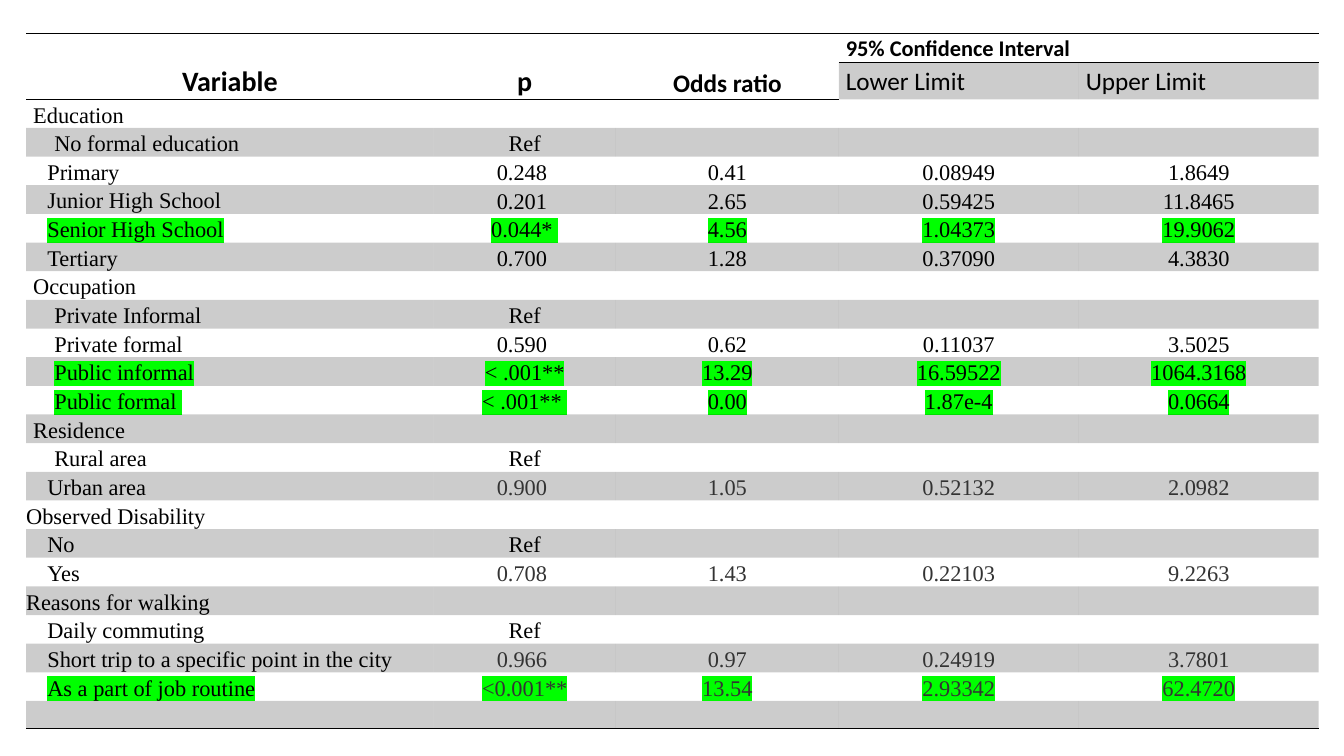
from lxml.etree import SubElement
from pptx import Presentation
from pptx.dml.color import RGBColor
from pptx.enum.text import MSO_ANCHOR, PP_ALIGN
from pptx.oxml.ns import qn
from pptx.util import Inches, Pt

BLACK, GREY, GREEN = "000000", "333333", "00FF00"
NO_STYLE = "{2D5ABB26-0587-4C30-8999-92F81FD0307C}"
INSET, INDENT = 0.07, 0.21


def add_solid(parent, color, alpha=100):
    solid = SubElement(parent, qn("a:solidFill"))
    tone = SubElement(solid, qn("a:srgbClr"), val=color)
    if alpha < 100:
        SubElement(tone, qn("a:alpha"), val=str(alpha * 1000))


def write(cell, text, size=16, font="Times New Roman", color=BLACK, bold=False, highlight=None,
          align=PP_ALIGN.LEFT, anchor=MSO_ANCHOR.TOP, inset=INSET, indent=0, spacing=1.15):
    cell.margin_left = cell.margin_right = Inches(inset)
    cell.margin_top = cell.margin_bottom = 0
    cell.vertical_anchor = anchor
    para = cell.text_frame.paragraphs[0]
    if not text:
        SubElement(para._p, qn("a:endParaRPr"), sz=str(size * 100))
        return
    para.alignment = align
    para.line_spacing = spacing
    para.space_after = Pt(8)
    if indent:
        properties = para._p.get_or_add_pPr()
        properties.set("marL", str(Inches(indent)))
        properties.set("indent", "0")
    span = para.add_run()
    span.text = text
    span.font.size = Pt(size)
    span.font.bold = bold
    span.font.color.rgb = RGBColor.from_string(color)
    if highlight:
        mark = SubElement(span.font._element, qn("a:highlight"))
        SubElement(mark, qn("a:srgbClr"), val=highlight)
    span.font.name = font


column_widths = [4.04, 1.81, 2.21, 2.38, 2.38]
row_height = 0.26

titles = [
    (0, 0, "Variable", dict(size=20, bold=True, align=PP_ALIGN.CENTER, anchor=MSO_ANCHOR.BOTTOM)),
    (0, 1, "p", dict(size=20, bold=True, align=PP_ALIGN.CENTER, anchor=MSO_ANCHOR.BOTTOM)),
    (0, 2, "Odds ratio", dict(size=18, bold=True, align=PP_ALIGN.CENTER, anchor=MSO_ANCHOR.BOTTOM)),
    (0, 3, "95% Confidence Interval", dict(bold=True)),
    (1, 3, "Lower Limit", dict(size=18, anchor=MSO_ANCHOR.MIDDLE)),
    (1, 4, "Upper Limit", dict(size=18, anchor=MSO_ANCHOR.MIDDLE)),
]

results = [
    (INSET, BLACK, ["Education"]),
    (INSET, BLACK, ["No formal education", "Ref"]),
    (0, BLACK, ["Primary", "0.248 ", "0.41", "0.08949", "1.8649"]),
    (0, BLACK, ["Junior High School", "0.201 ", "2.65", "0.59425", "11.8465"]),
    (0, BLACK, ["Senior High School", "0.044* ", "4.56", "1.04373", "19.9062"]),
    (0, BLACK, ["Tertiary", "0.700 ", "1.28", "0.37090", "4.3830"]),
    (INSET, BLACK, ["Occupation"]),
    (INSET, BLACK, ["Private Informal", "Ref"]),
    (INSET, BLACK, ["Private formal", "0.590 ", "0.62", "0.11037", "3.5025"]),
    (INSET, BLACK, ["Public informal", "< .001**", "13.29", "16.59522", "1064.3168"]),
    (INSET, BLACK, ["Public formal ", "< .001** ", "0.00", "1.87e-4", "0.0664"]),
    (INSET, BLACK, ["Residence"]),
    (INSET, BLACK, ["Rural area", "Ref"]),
    (0, GREY, ["Urban area", "0.900 ", "1.05", "0.52132", "2.0982"]),
    (0, BLACK, ["Observed Disability"]),
    (0, BLACK, ["No", "Ref"]),
    (0, GREY, ["Yes", "0.708 ", "1.43", "0.22103", "9.2263"]),
    (0, BLACK, ["Reasons for walking"]),
    (0, BLACK, ["Daily commuting", "Ref"]),
    (0, GREY, ["Short trip to a specific point in the city", "0.966 ", "0.97", "0.24919", "3.7801"]),
    (0, GREY, ["As a part of job routine", "<0.001**", "13.54", "2.93342", "62.4720"]),
    (0, BLACK, [""]),
]

deck = Presentation()
deck.slide_width, deck.slide_height = Inches(13.33), Inches(7.5)
page = deck.slides.add_slide(deck.slide_layouts[6])

row_count, column_count = 2 + len(results), len(column_widths)
frame = page.shapes.add_table(row_count, column_count, Inches(0.26), Inches(0.33),
                              Inches(sum(column_widths)), Inches(row_height * row_count))
table = frame.table
table.first_row = table.horz_banding = False
table._tbl.tblPr.find(qn("a:tableStyleId")).text = NO_STYLE
for column, width in zip(table.columns, column_widths):
    column.width = Inches(width)
for row in table.rows:
    row.height = Inches(row_height)

for column in range(3):
    table.cell(0, column).merge(table.cell(1, column))
table.cell(0, 3).merge(table.cell(0, 4))

titled = {(row, column): (text, style) for row, column, text, style in titles}
for row in range(2):
    for column in range(column_count):
        text, style = titled.get((row, column), ("", {}))
        write(table.cell(row, column), text, font="Calibri", spacing=1.07, **style)

for row, (inset, color, texts) in enumerate(results, start=2):
    significant = len(texts) > 1 and "*" in texts[1]
    highlight = GREEN if significant else None
    write(table.cell(row, 0), texts[0], inset=inset, highlight=highlight,
          indent=INDENT if len(texts) > 1 else 0)
    for column in range(1, column_count):
        text = texts[column] if column < len(texts) else ""
        anchor = MSO_ANCHOR.MIDDLE if inset or column == 2 else MSO_ANCHOR.BOTTOM
        write(table.cell(row, column), text, color=color, highlight=highlight,
              align=PP_ALIGN.CENTER, anchor=anchor, inset=inset)

last_row = row_count - 1
for row in range(row_count):
    for column in range(column_count):
        properties = table.cell(row, column)._tc.get_or_add_tcPr()
        edges = []
        if row == 0:
            edges.append("a:lnT")
        if row in (0, last_row) or (row == 1 and column < 3):
            edges.append("a:lnB")
        for edge in edges:
            add_solid(SubElement(properties, qn(edge), w=str(Pt(1))), BLACK)
        if (row == 1 and column >= 3) or (row > 1 and row % 2 == 1):
            add_solid(properties, BLACK, alpha=20)

deck.save("out.pptx")
